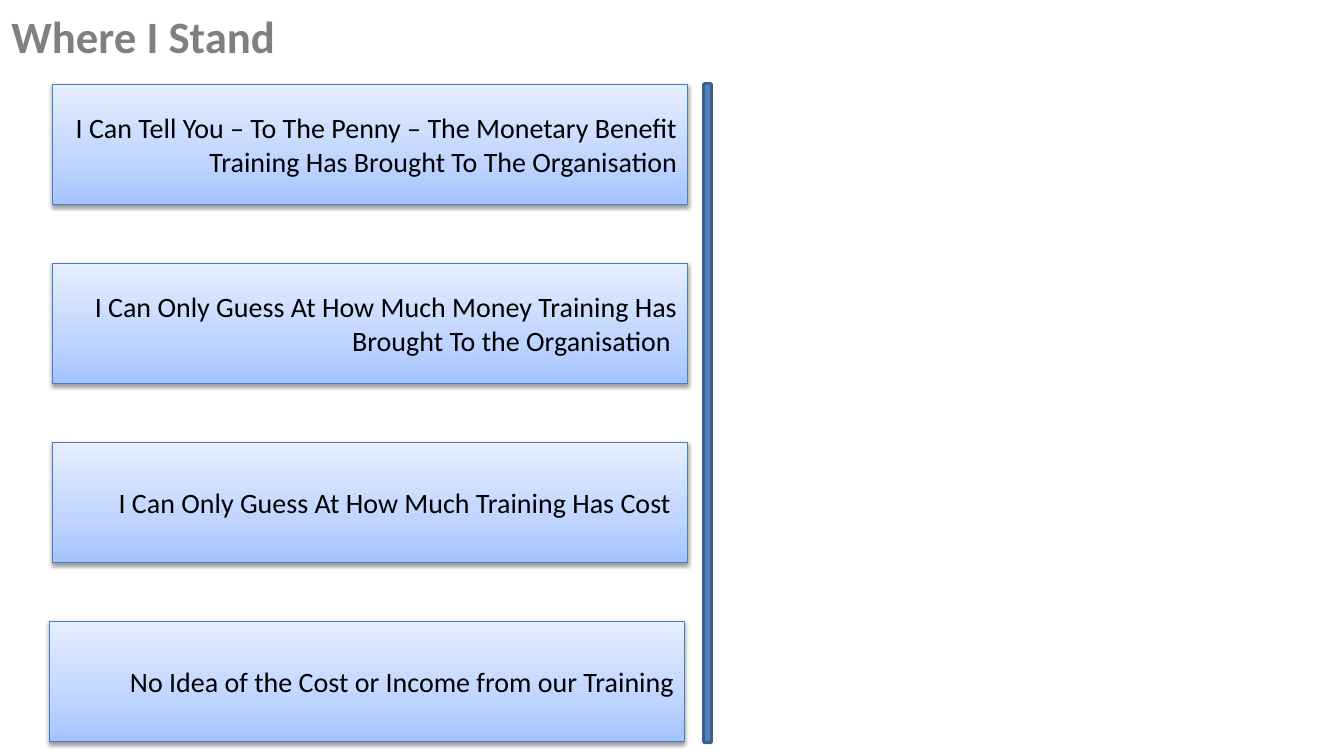
from lxml import etree
from pptx import Presentation
from pptx.dml.color import RGBColor
from pptx.enum import shapes, text
from pptx.oxml.ns import qn
from pptx.util import Cm, Pt

TITLE = "Where I Stand"
LEVELS = [
    "I Can Tell You – To The Penny – The Monetary Benefit Training Has Brought To The Organisation",
    "I Can Only Guess At How Much Money Training Has Brought To the Organisation ",
    "I Can Only Guess At How Much Training Has Cost ",
    "No Idea of the Cost or Income from our Training",
]
HEX = {"title": "808080", "text": "000000", "bar": "4F81BD", "bar edge": "3A5F8C",
       "box edge": "4B7EBC", "shadow": "000000"}
STOPS = [(0, "A4C4FF"), (35, "BFD4FF"), (100, "E6EEFF")]

LEFT, TOP, WIDE, HIGH, STEP = 1.32, 2.13, 16, 3.02, 4.51
NUDGE = 0.08  # the last box sits slightly further left
BAR_MID, BAR_LONG, BAR_THIN = (17.83, 10.41), 16.61, 0.2


def rgb(name):
    return RGBColor.from_string(HEX[name])


def write(frame, words, size, color, align, bold=False):
    para = frame.paragraphs[0]
    para.alignment = align
    run = para.add_run()
    run.text = words
    run.font.name = "Calibri"
    run.font.size = Pt(size)
    run.font.bold = bold
    run.font.color.rgb = rgb(color)


def edge(shape, color, width):
    shape.line.color.rgb = rgb(color)
    shape.line.width = Pt(width)


def tint(parent, color):
    return etree.SubElement(parent, qn("a:srgbClr"), val=color)


def shade(shape):
    """Fill with the three-stop gradient, light at the top."""
    shape.fill.gradient()
    shape.fill.gradient_angle = 90
    stops = shape._element.spPr.find(".//" + qn("a:gsLst"))
    for old in list(stops):
        stops.remove(old)
    for place, color in STOPS:
        tint(etree.SubElement(stops, qn("a:gs"), pos=str(place * 1000)), color)


def drop(shape):
    """Cast a soft shadow straight down."""
    shape.shadow.inherit = False
    effects = shape._element.spPr.find(qn("a:effectLst"))
    cast = etree.SubElement(effects, qn("a:outerShdw"), blurRad=str(Pt(3.1)),
                            dist=str(Pt(1.6)), dir="5400000", rotWithShape="0")
    etree.SubElement(tint(cast, HEX["shadow"]), qn("a:alpha"), val="38000")


def add_title(slide):
    title = slide.shapes.title
    title.left, title.top, title.width, title.height = Cm(0.03), Cm(0.1), Cm(7.21), Cm(1.62)
    frame = title.text_frame
    frame.word_wrap = False
    frame.auto_size = text.MSO_AUTO_SIZE.SHAPE_TO_FIT_TEXT
    frame.vertical_anchor = text.MSO_ANCHOR.TOP
    write(frame, TITLE, 32, "title", text.PP_ALIGN.LEFT, bold=True)


def add_bar(slide):
    x, y = BAR_MID
    bar = slide.shapes.add_shape(
        shapes.MSO_SHAPE.FLOWCHART_ALTERNATE_PROCESS,
        Cm(x - BAR_LONG / 2), Cm(y - BAR_THIN / 2), Cm(BAR_LONG), Cm(BAR_THIN))
    bar.rotation = 90
    bar.shadow.inherit = False
    bar.fill.solid()
    bar.fill.fore_color.rgb = rgb("bar")
    edge(bar, "bar edge", 2)


def add_box(slide, row, words):
    left = LEFT - NUDGE * (row == len(LEVELS) - 1)
    box = slide.shapes.add_shape(shapes.MSO_SHAPE.RECTANGLE, Cm(left),
                                 Cm(TOP + row * STEP), Cm(WIDE), Cm(HIGH))
    shade(box)
    edge(box, "box edge", 0.75)
    drop(box)
    box.text_frame.word_wrap = True
    box.text_frame.vertical_anchor = text.MSO_ANCHOR.MIDDLE
    write(box.text_frame, words, 20, "text", text.PP_ALIGN.RIGHT)


def main():
    deck = Presentation()
    deck.slide_width, deck.slide_height = Cm(33.87), Cm(19.05)
    slide = deck.slides.add_slide(deck.slide_layouts[5])
    add_title(slide)
    add_bar(slide)
    for row, words in enumerate(LEVELS):
        add_box(slide, row, words)
    deck.save("out.pptx")


if __name__ == "__main__":
    main()
